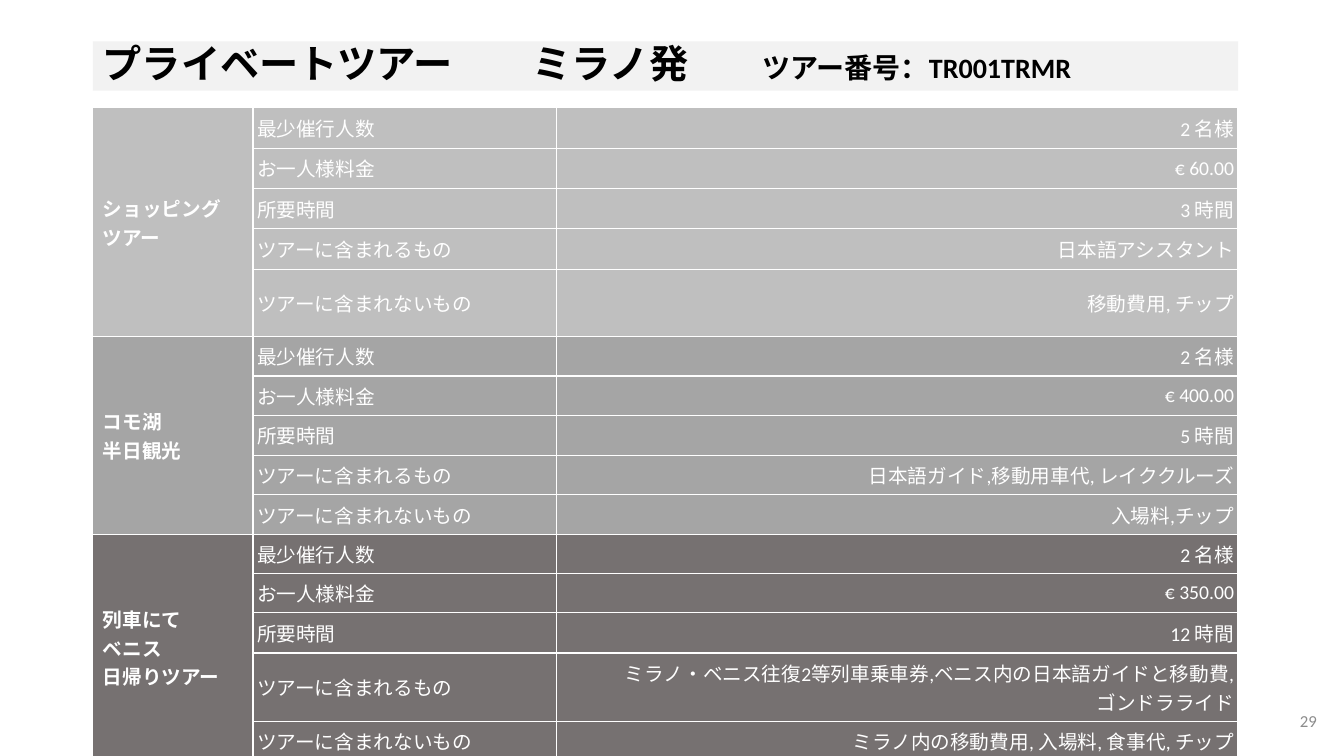
from lxml import etree
from pptx import Presentation
from pptx.dml.color import RGBColor
from pptx.enum.text import MSO_ANCHOR, MSO_AUTO_SIZE, PP_ALIGN
from pptx.oxml.ns import qn
from pptx.util import Inches, Pt

LEFT, RIGHT = PP_ALIGN.LEFT, PP_ALIGN.RIGHT
MIDDLE = MSO_ANCHOR.MIDDLE
NO_AUTOFIT = MSO_AUTO_SIZE.NONE
MARGIN = 0.92
COLUMNS = [1.59, 3.01, 6.76]
WIDTH = sum(COLUMNS)
TABLE_TOP = 1.07
INSET = Inches(0.04)

ITEMS = ["最少催行人数", "お一人様料金", "所要時間", "ツアーに含まれるもの", "ツアーに含まれないもの"]
TOURS = [
    ("BFBFBF", ["ショッピング", "ツアー"], [0.4, 0.4, 0.4, 0.4, 0.67],
     ["2 名様", "€ 60.00", "3 時間", "日本語アシスタント", "移動費用, チップ"]),
    ("A5A5A5", ["コモ湖", "半日観光"], [0.39, 0.39, 0.4, 0.39, 0.39],
     ["2 名様", "€ 400.00", "5 時間", "日本語ガイド,移動用車代, レイククルーズ", "入場料,チップ"]),
    ("767171", ["列車にて", "ベニス", "日帰りツアー"], [0.39, 0.39, 0.4, 0.68, 0.39],
     ["2 名様", "€ 350.00", "12 時間",
      "ミラノ・ベニス往復2等列車乗車券,ベニス内の日本語ガイドと移動費,\nゴンドラライド",
      "ミラノ内の移動費用, 入場料, 食事代, チップ"]),
]


def rgb(hex_color):
    return RGBColor.from_string(hex_color)


def write(frame, lines, size, color, bold=False, align=LEFT):
    for index, line in enumerate(lines):
        paragraph = frame.paragraphs[0] if index == 0 else frame.add_paragraph()
        paragraph.alignment = align
        run = paragraph.add_run()
        run.text = line
        run.font.name = "Calibri"
        run.font.size = Pt(size)
        run.font.bold = bold
        run.font.color.rgb = rgb(color)


prs = Presentation()
prs.slide_width, prs.slide_height = Inches(13.33), Inches(7.5)
slide = prs.slides.add_slide(prs.slide_layouts[5])

title = slide.shapes.title
title.left, title.top = Inches(MARGIN), Inches(0.41)
title.width, title.height = Inches(WIDTH), Inches(0.49)
title.fill.solid()
title.fill.fore_color.rgb = rgb("F2F2F2")
heading = title.text_frame
heading.auto_size = NO_AUTOFIT
heading.vertical_anchor = MIDDLE
write(heading, ["プライベートツアー\tミラノ発\t"], 28, "000000", bold=True)
heading_line = heading.paragraphs[0]
heading_line.line_spacing = 0.9
tour_number = heading_line.add_run()
tour_number.text = "ツアー番号：TR001TRMR"
tour_number.font.name = "Calibri"
tour_number.font.size = Pt(20)
tour_number.font.bold = True
tour_number.font.color.rgb = rgb("000000")
tab_stops = etree.SubElement(heading_line._p.get_or_add_pPr(), qn("a:tabLst"))
for stop in (4.26, 6.54):
    etree.SubElement(tab_stops, qn("a:tab"), pos=str(Inches(stop)), algn="l")

heights = [height for tour in TOURS for height in tour[2]]
tour_table = slide.shapes.add_table(
    len(heights), len(COLUMNS), Inches(MARGIN), Inches(TABLE_TOP),
    Inches(WIDTH), Inches(sum(heights))).table
tour_table.first_row = False
tour_table.horz_banding = False
for column, width in zip(tour_table.columns, COLUMNS):
    column.width = Inches(width)
for row, height in zip(tour_table.rows, heights):
    row.height = Inches(height)

for tour_index, (shade, tour_name, _, details) in enumerate(TOURS):
    first = tour_index * len(ITEMS)
    for offset, (item, detail) in enumerate(zip(ITEMS, details)):
        for column in range(len(COLUMNS)):
            cell = tour_table.cell(first + offset, column)
            cell.vertical_anchor = MIDDLE
            properties = cell._tc.get_or_add_tcPr()
            for side in ("a:lnL", "a:lnR", "a:lnT", "a:lnB"):
                border = etree.SubElement(properties, qn(side), w=str(Pt(1)))
                paint = etree.SubElement(border, qn("a:solidFill"))
                etree.SubElement(paint, qn("a:srgbClr"), val="FFFFFF")
            cell.fill.solid()
            cell.fill.fore_color.rgb = rgb(shade)
            if column > 0:
                cell.margin_left = cell.margin_right = INSET
                cell.margin_top = cell.margin_bottom = INSET
        write(tour_table.cell(first + offset, 1).text_frame, [item], 14, "FFFFFF")
        write(tour_table.cell(first + offset, 2).text_frame, detail.split("\n"),
              14, "FFFFFF", align=RIGHT)
    name_cell = tour_table.cell(first, 0)
    name_cell.merge(tour_table.cell(first + len(ITEMS) - 1, 0))
    write(name_cell.text_frame, tour_name, 14, "FFFFFF", bold=True)

page_number = slide.shapes.add_textbox(
    Inches(10.16), Inches(6.95), Inches(3), Inches(0.4)).text_frame
page_number.word_wrap = True
page_number.vertical_anchor = MIDDLE
write(page_number, ["29"], 12, "8C8C8C", align=RIGHT)

prs.save("out.pptx")
